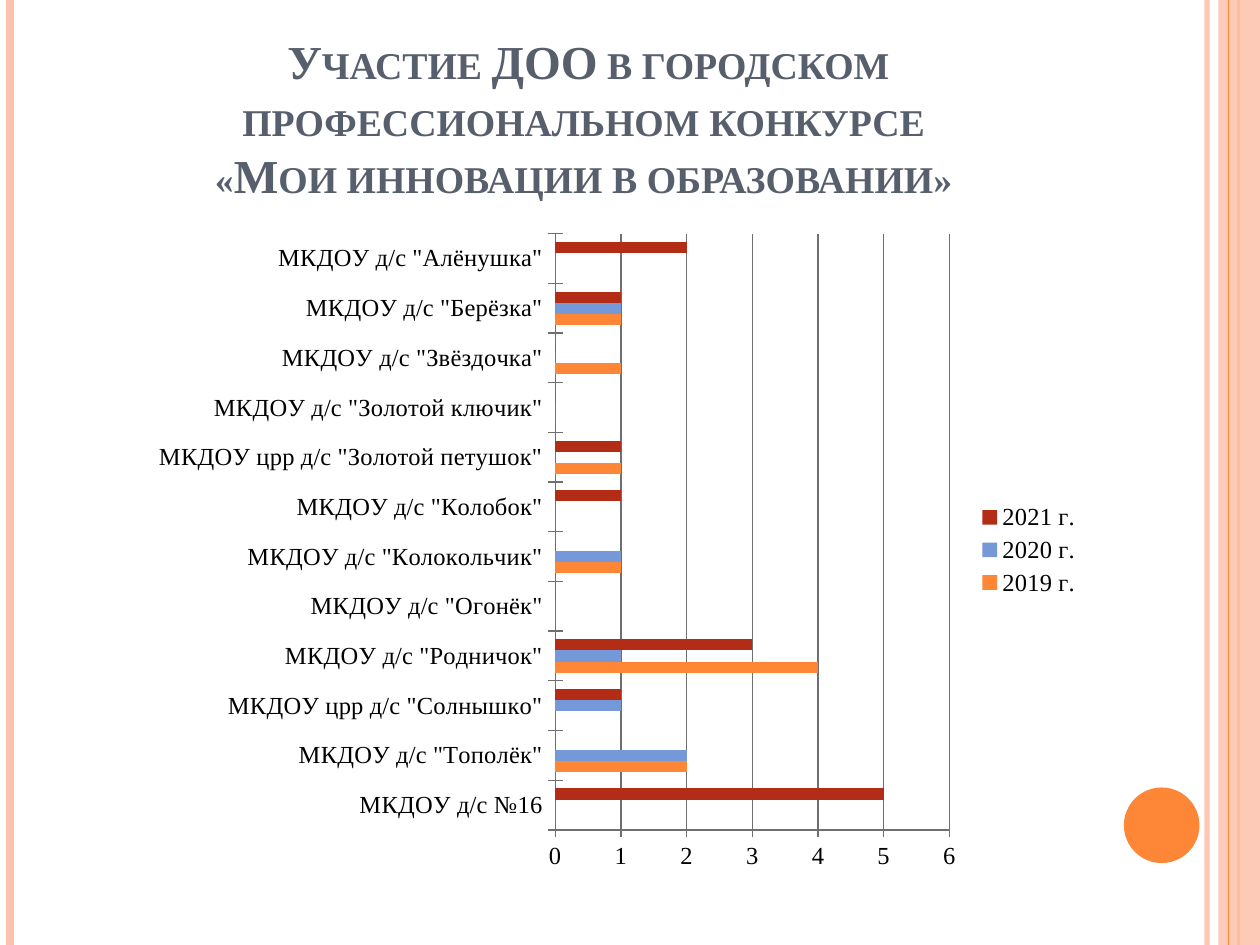
from lxml.etree import SubElement
from pptx import Presentation
from pptx.chart.data import CategoryChartData
from pptx.dml.color import RGBColor
from pptx.enum.chart import XL_CHART_TYPE as ChartType, XL_LEGEND_POSITION as LegendPos
from pptx.enum.chart import XL_TICK_MARK as TickMark
from pptx.enum.shapes import MSO_CONNECTOR as Connector, MSO_SHAPE as Shape
from pptx.enum.text import MSO_ANCHOR as Anchor, MSO_AUTO_SIZE as AutoSize, PP_ALIGN as Align
from pptx.oxml.ns import qn
from pptx.util import Inches, Pt

WIDTH, HEIGHT = 10, 7.5
ORANGE, PEACH, SLATE, GRAY = "FE8637", "FEC3AE", "575F6D", "6F6F6F"
FONT = "Times New Roman"

TITLE = ("Участие ДОО в городском профессиональном конкурсе "
         "\v«Мои инновации в образовании» ")
KINDERGARTENS = [
    'МКДОУ д/с №16', 'МКДОУ д/с "Тополёк"', 'МКДОУ црр д/с "Солнышко"',
    'МКДОУ д/с "Родничок"', 'МКДОУ д/с "Огонёк"', 'МКДОУ д/с "Колокольчик"',
    'МКДОУ д/с "Колобок"', 'МКДОУ црр д/с "Золотой петушок"',
    'МКДОУ д/с "Золотой ключик"', 'МКДОУ д/с "Звёздочка"',
    'МКДОУ д/с "Берёзка"', 'МКДОУ д/с "Алёнушка"',
]
YEARS = [
    ("2019 г.", ORANGE, [0, 2, 0, 4, 0, 1, 0, 1, 0, 1, 1, 0]),
    ("2020 г.", "7598D9", [0, 2, 1, 1, 0, 1, 0, 0, 0, 0, 1, 0]),
    ("2021 г.", "B32C16", [5, 0, 1, 3, 0, 0, 1, 1, 0, 0, 1, 2]),
]


def color(hex_code):
    return RGBColor.from_string(hex_code)


def set_alpha(shape, percent):
    """Make the first solid colour of a shape partly transparent."""
    tone = next(shape._element.spPr.iter(qn("a:srgbClr")))
    SubElement(tone, qn("a:alpha"), val=str(percent * 1000))


def add_stripe(page, x, tone, weight, alpha=None):
    """Draw a full-height vertical line."""
    line = page.shapes.add_connector(
        Connector.STRAIGHT, Inches(x), 0, Inches(x), Inches(HEIGHT))
    line.line.color.rgb = color(tone)
    line.line.width = Pt(weight)
    SubElement(line._element.spPr, qn("a:effectLst"))
    if alpha:
        set_alpha(line, alpha)


def add_filled(page, kind, left, top, width, height, tone, alpha=None):
    shape = page.shapes.add_shape(
        kind, Inches(left), Inches(top), Inches(width), Inches(height))
    shape.shadow.inherit = False
    shape.fill.solid()
    shape.fill.fore_color.rgb = color(tone)
    shape.line.fill.background()
    if alpha:
        set_alpha(shape, alpha)


def add_decoration(page):
    add_stripe(page, 9.58, PEACH, 3, alpha=93)
    add_stripe(page, 0.08, PEACH, 4.5)
    add_stripe(page, 9.83, ORANGE, 1.5)
    add_filled(page, Shape.RECTANGLE, 9.67, 0, WIDTH - 9.67, HEIGHT, PEACH, alpha=87)
    add_stripe(page, 9.75, ORANGE, 0.75)
    add_filled(page, Shape.OVAL, 8.92, 6.25, 0.6, 0.6, ORANGE)


def format_title(page, text, size, tone):
    box = page.shapes.title
    box.left, box.top = Inches(0.59), Inches(0.29)
    box.width, box.height = Inches(8.16), Inches(1.37)
    frame = box.text_frame
    frame.text = text
    frame.word_wrap = True
    frame.auto_size = AutoSize.NONE
    frame.vertical_anchor = Anchor.BOTTOM
    para = frame.paragraphs[0]
    para.alignment = Align.CENTER
    for span in para.runs:
        span.font.name = FONT
        span.font.size = Pt(size)
        span.font.bold = True
        span.font.color.rgb = color(tone)
        span.font._element.set("cap", "small")


def set_plot_area(chart, **shares):
    """Place the inner plot area by shares of the chart's size."""
    area = chart._chartSpace.chart.plotArea
    layout = area.find(qn("c:layout"))
    if layout is None:
        layout = SubElement(area, qn("c:layout"))
        area.insert(0, layout)
    manual = SubElement(layout, qn("c:manualLayout"))
    settings = {"layoutTarget": "inner", "xMode": "edge", "yMode": "edge", **shares}
    for name, value in settings.items():
        SubElement(manual, qn(f"c:{name}"), val=str(value))


def add_bar_chart(page):
    data = CategoryChartData()
    data.categories = KINDERGARTENS
    for name, _, values in YEARS:
        data.add_series(name, values)
    chart = page.shapes.add_chart(
        ChartType.BAR_CLUSTERED, Inches(0.51), Inches(1.7),
        Inches(8.17), Inches(5.33), data).chart
    chart.has_title = False
    chart.font.name = FONT
    chart.font.size = Pt(14)
    chart.font.color.rgb = color("000000")
    set_plot_area(chart, x=0.477, y=0.029, w=0.383, h=0.888)

    # Bars
    plot = chart.plots[0]
    plot.gap_width, plot.overlap = 150, 0
    plot.vary_by_categories = False
    for series, (_, tone, _) in zip(plot.series, YEARS):
        series.format.fill.solid()
        series.format.fill.fore_color.rgb = color(tone)

    # Axes and gridlines
    values = chart.value_axis
    values.minimum_scale, values.maximum_scale, values.major_unit = 0, 6, 1
    values.has_major_gridlines = True
    for axis in (chart.category_axis, values):
        axis.major_tick_mark = TickMark.CROSS
    for part in (chart.category_axis, values, values.major_gridlines):
        part.format.line.color.rgb = color(GRAY)
        part.format.line.width = Pt(0.75)

    # Legend
    chart.has_legend = True
    chart.legend.position = LegendPos.RIGHT
    chart.legend.include_in_layout = False


def main():
    deck = Presentation()
    deck.slide_width, deck.slide_height = Inches(WIDTH), Inches(HEIGHT)
    page = deck.slides.add_slide(deck.slide_layouts[5])
    add_decoration(page)
    format_title(page, TITLE, 27, SLATE)
    add_bar_chart(page)
    deck.save("out.pptx")


if __name__ == "__main__":
    main()
